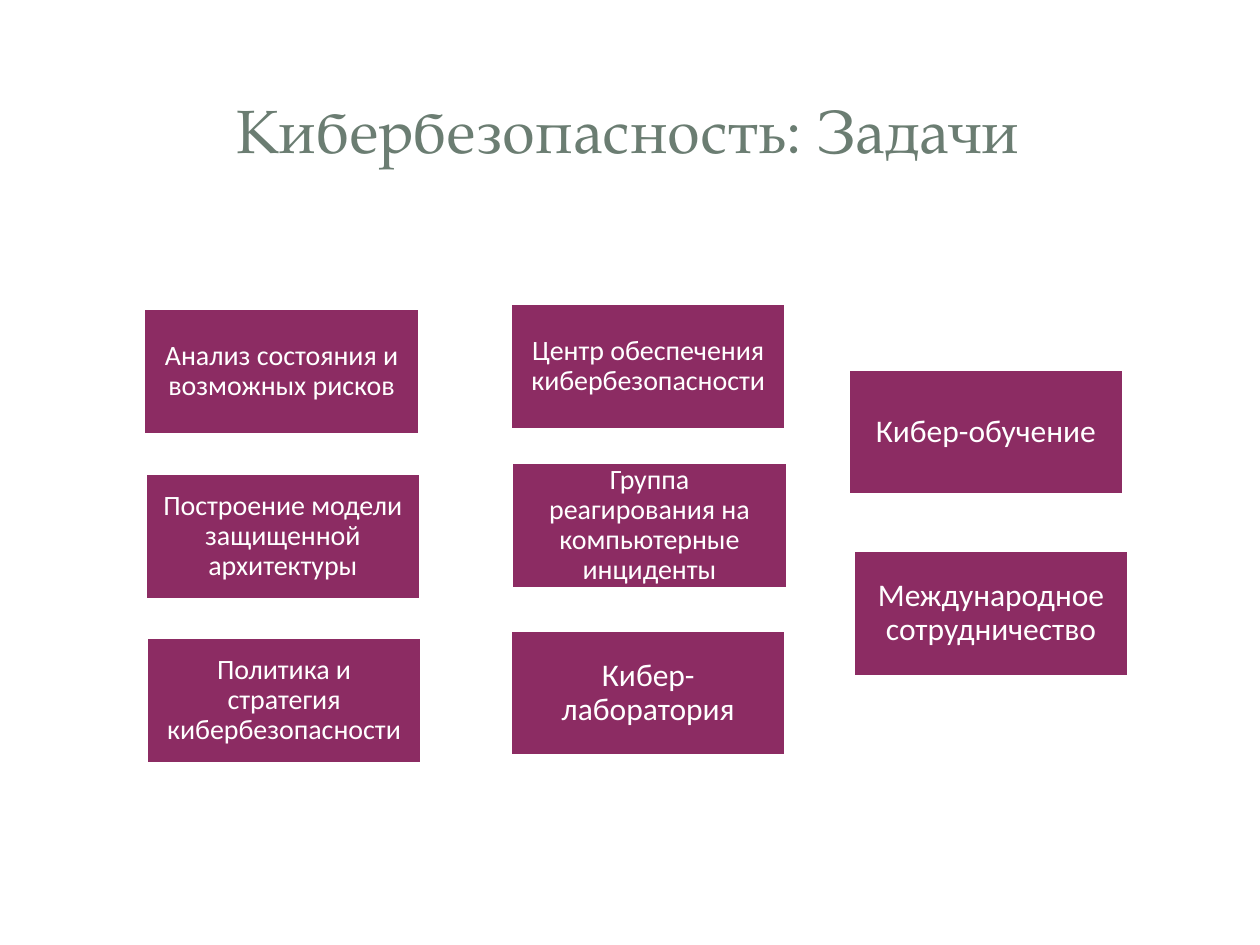
"""Build the slide that lists the cybersecurity tasks in three columns."""
from dataclasses import dataclass

from pptx import Presentation
from pptx.dml.color import RGBColor
from pptx.enum.shapes import MSO_SHAPE as Preset
from pptx.enum.text import MSO_ANCHOR as Anchor, MSO_AUTO_SIZE as AutoSize, PP_ALIGN as Align
from pptx.slide import Slide
from pptx.util import Inches, Pt

SLIDE_WIDTH, SLIDE_HEIGHT = Inches(10), Inches(7.5)
COLUMN, ROW = SLIDE_WIDTH / 100, SLIDE_HEIGHT / 75
TASK_COLUMNS, TASK_ROWS = 21.9, 10


@dataclass(frozen=True)
class Theme:
    background: RGBColor = RGBColor.from_string("FFFFFF")
    heading: RGBColor = RGBColor.from_string("6B7D72")
    task_fill: RGBColor = RGBColor.from_string("8C2C63")
    task_ink: RGBColor = RGBColor.from_string("FFFFFF")
    heading_face: str = "TeX Gyre Pagella"
    task_face: str = "Calibri"
    heading_size: int = 35
    long_task_size: int = 16
    short_task_size: int = 18


THEME = Theme()


@dataclass(frozen=True)
class Task:
    label: str
    column: float
    row: float
    size: int = THEME.long_task_size


TASKS = [
    Task("Анализ состояния и возможных рисков", 11.4, 24.5),
    Task("Построение модели защищенной архитектуры", 11.5, 37.6),
    Task("Политика и стратегия кибербезопасности", 11.6, 50.6),
    Task("Центр обеспечения кибербезопасности", 40.5, 24.1),
    Task("Группа реагирования на компьютерные инциденты", 40.6, 36.7),
    Task("Кибер-лаборатория", 40.5, 50, THEME.short_task_size),
    Task("Кибер-обучение", 67.3, 29.3, THEME.short_task_size),
    Task("Международное сотрудничество", 67.7, 43.7, THEME.short_task_size),
]


def place(item, column: float, row: float, columns: float, rows: float) -> None:
    item.left, item.top = round(column * COLUMN), round(row * ROW)
    item.width, item.height = round(columns * COLUMN), round(rows * ROW)


def write(item, wording: str, face: str, size: int, ink: RGBColor) -> None:
    frame = item.text_frame
    frame.text = wording
    frame.word_wrap = True
    frame.auto_size = AutoSize.NONE
    frame.vertical_anchor = Anchor.MIDDLE
    paragraph = frame.paragraphs[0]
    paragraph.alignment = Align.CENTER
    paragraph.font.name = face
    paragraph.font.size = Pt(size)
    paragraph.font.color.rgb = ink


def draw_heading(slide: Slide, wording: str) -> None:
    heading = slide.shapes.title
    place(heading, 4.7, 4.5, 90.3, 11.4)
    write(heading, wording, THEME.heading_face, THEME.heading_size, THEME.heading)


def draw_task(slide: Slide, task: Task) -> None:
    card = slide.shapes.add_shape(Preset.RECTANGLE, 0, 0, 0, 0)
    place(card, task.column, task.row, TASK_COLUMNS, TASK_ROWS)
    card.shadow.inherit = False
    card.fill.solid()
    card.fill.fore_color.rgb = THEME.task_fill
    card.line.color.rgb = THEME.background
    card.line.width = Pt(2)
    write(card, task.label, THEME.task_face, task.size, THEME.task_ink)
    frame = card.text_frame
    frame.margin_left = frame.margin_right = Inches(0.12)
    frame.margin_top = frame.margin_bottom = Inches(0.12)
    frame.paragraphs[0].line_spacing = 0.9


def main() -> None:
    deck = Presentation()
    deck.slide_width, deck.slide_height = SLIDE_WIDTH, SLIDE_HEIGHT
    slide = deck.slides.add_slide(deck.slide_layouts.get_by_name("Title Only"))
    slide.background.fill.solid()
    slide.background.fill.fore_color.rgb = THEME.background
    draw_heading(slide, "Кибербезопасность: Задачи")
    for task in TASKS:
        draw_task(slide, task)
    deck.save("out.pptx")


if __name__ == "__main__":
    main()
